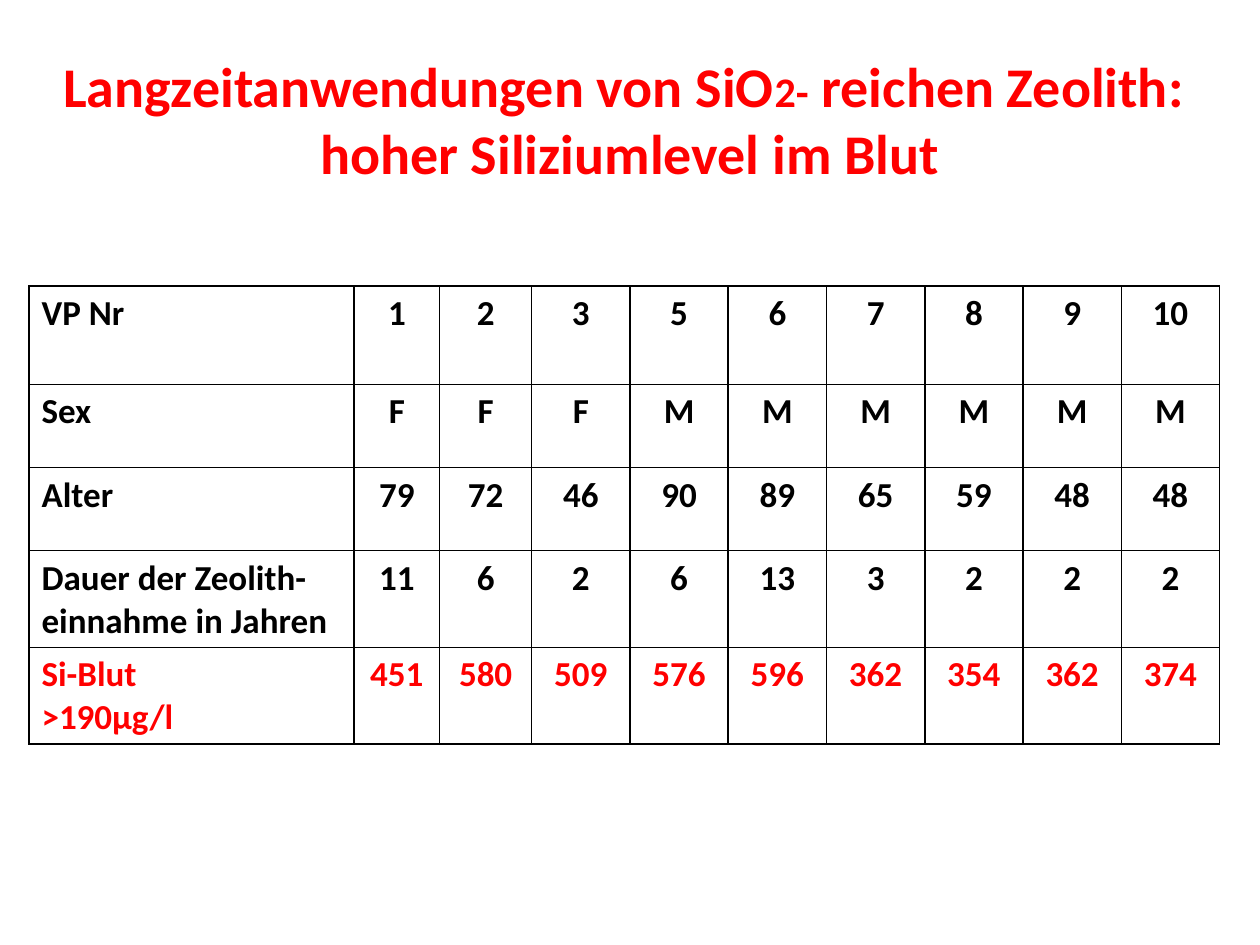
from lxml.etree import SubElement
from pptx import Presentation
from pptx.dml.color import RGBColor
from pptx.enum.text import MSO_AUTO_SIZE as AutoSize, PP_ALIGN as Align
from pptx.oxml.ns import qn
from pptx.util import Inches, Pt

BLACK, RED = "000000", "FF0000"
TITLE = [
    [("Langzeitanwendungen von SiO", 32), ("2-", 24), (" reichen Zeolith: ", 32)],
    [("hoher Siliziumlevel im Blut", 32)],
]
ROWS = [
    ("VP Nr", "1 2 3 5 6 7 8 9 10", 0.78, BLACK),
    ("Sex", "F F F M M M M M M", 0.66, BLACK),
    ("Alter", "79 72 46 90 89 65 59 48 48", 0.66, BLACK),
    ("Dauer der Zeolith-einnahme in Jahren", "11 6 2 6 13 3 2 2 2", 0.66, BLACK),
    ("Si-Blut\n>190µg/l", "451 580 509 576 596 362 354 362 374", 0.69, RED),
]
COLUMN_WIDTHS = [2.58, 0.68, 0.73] + [0.78] * 7


def rgb(color):
    return RGBColor.from_string(color)


def style_font(font, size, color):
    values = {"name": "Calibri", "size": Pt(size), "bold": True}
    for key, value in values.items():
        setattr(font, key, value)
    font.color.rgb = rgb(color)


def add_title(slide, left, top, width, height):
    box = slide.shapes.add_textbox(*map(Inches, (left, top, width, height)))
    frame = box.text_frame
    frame.word_wrap = True
    frame.auto_size = AutoSize.SHAPE_TO_FIT_TEXT
    for index, parts in enumerate(TITLE):
        line = frame.add_paragraph() if index else frame.paragraphs[0]
        line.alignment = Align.CENTER
        for text, size in parts:
            run = line.add_run()
            run.text = text
            style_font(run.font, size, RED)


def add_borders(cell):
    properties = cell._tc.get_or_add_tcPr()
    for position, side in enumerate(("lnL", "lnR", "lnT", "lnB")):
        border = properties.makeelement(qn(f"a:{side}"), {"w": str(Pt(1))})
        fill = SubElement(border, qn("a:solidFill"))
        SubElement(fill, qn("a:srgbClr"), val=BLACK)
        properties.insert(position, border)


def fill_cell(cell, text, color, alignment):
    cell.text = text
    cell.fill.background()
    add_borders(cell)
    for paragraph in cell.text_frame.paragraphs:
        paragraph.alignment = alignment
        for run in paragraph.runs:
            style_font(run.font, 20, color)


def add_results(slide, left, top, width, height):
    frame = slide.shapes.add_table(
        len(ROWS), len(COLUMN_WIDTHS), *map(Inches, (left, top, width, height))
    )
    results = frame.table
    for flag in ("first_row", "horz_banding"):
        setattr(results, flag, False)
    for column, column_width in zip(results.columns, COLUMN_WIDTHS):
        column.width = Inches(column_width)
    for row, (label, values, row_height, color) in zip(results.rows, ROWS):
        row.height = Inches(row_height)
        for index, text in enumerate([label] + values.split()):
            alignment = Align.CENTER if index else Align.LEFT
            fill_cell(row.cells[index], text, color, alignment)


def main():
    deck = Presentation()
    deck.slide_width, deck.slide_height = Inches(10), Inches(7.5)
    slide = deck.slides.add_slide(deck.slide_layouts[6])
    add_title(slide, 0, 0.36, 10, 1.18)
    add_results(slide, 0.23, 2.27, 9.45, 3.64)
    deck.save("out.pptx")


if __name__ == "__main__":
    main()
